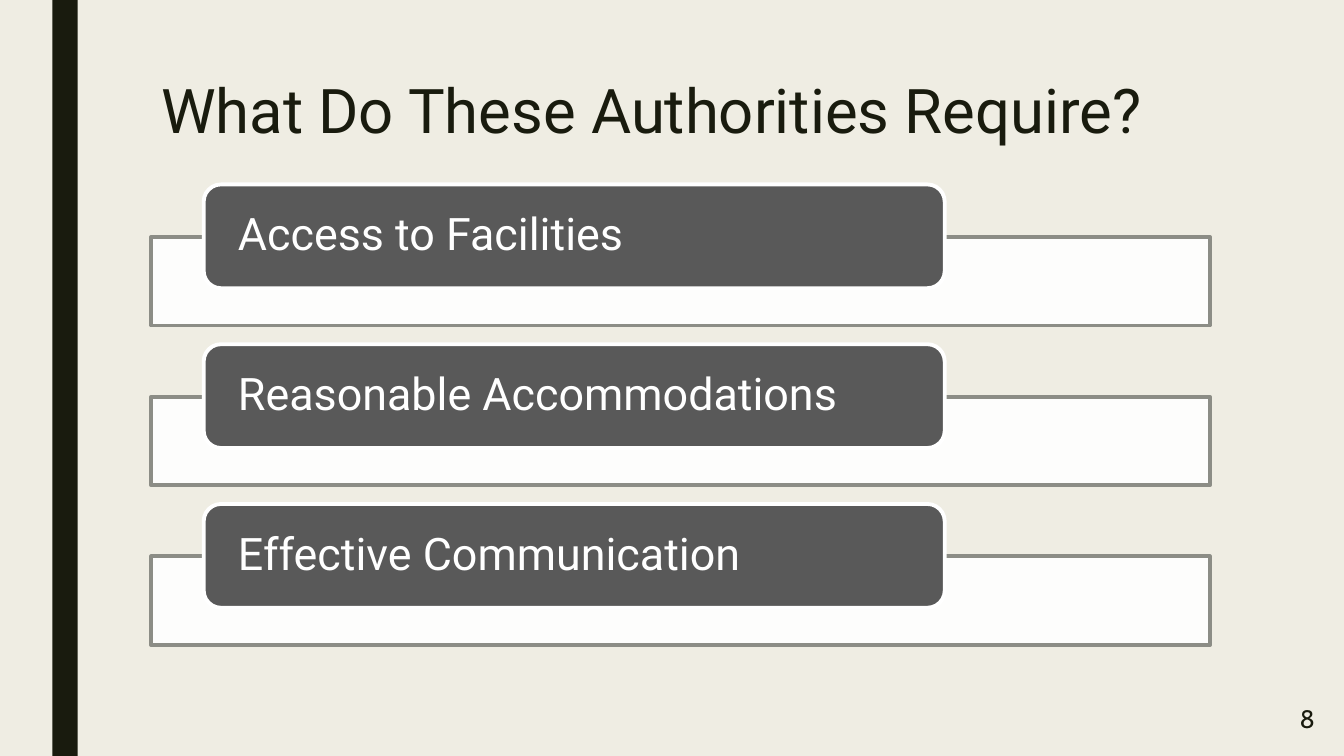
from lxml import etree
from pptx import Presentation
from pptx.dml.color import RGBColor
from pptx.enum import shapes, text
from pptx.oxml.ns import qn
from pptx.util import Inches, Pt

TITLE = "What Do These Authorities Require?"
REQUIREMENTS = [
    "Access to Facilities",
    "Reasonable Accommodations",
    "Effective Communication",
]
PAGE_NUMBER = "8"

INK, PAPER, WHITE = "191B0E", "EFEDE3", "FFFFFF"
LABEL_GREY, BORDER_GREY = "595959", "8C8D86"
LEFT, WIDTH = 1.5, 10.5
FIRST_PANEL_TOP, PITCH = 2.35, 1.585
LABEL_INDENT, LABEL_RISE = 0.52, 0.52


def paint(target, color):
    target.solid()
    target.fore_color.rgb = RGBColor.from_string(color)


def add_block(slide, kind, left, top, width, height, fill, border=None):
    block = slide.shapes.add_shape(
        kind, Inches(left), Inches(top), Inches(width), Inches(height))
    block.shadow.inherit = False
    paint(block.fill, fill)
    if border:
        paint(block.line.fill, border)
        block.line.width = Pt(2.75)
    else:
        block.line.fill.background()
    return block


def write(block, words, size, font, color, align=text.PP_ALIGN.LEFT,
          anchor=text.MSO_ANCHOR.MIDDLE, spacing=1.0):
    frame = block.text_frame
    frame.word_wrap = True
    frame.vertical_anchor = anchor
    line = frame.paragraphs[0]
    line.text = words
    line.alignment = align
    line.line_spacing = spacing
    line.font.size = Pt(size)
    line.font.name = font
    line.font.color.rgb = RGBColor.from_string(color)
    return frame


def add_requirement(slide, words, top):
    panel = add_block(slide, shapes.MSO_SHAPE.RECTANGLE,
                      LEFT, top, WIDTH, 0.88, WHITE, BORDER_GREY)
    tint = panel.fill._xPr.find(qn("a:solidFill"))[0]
    etree.SubElement(tint, qn("a:alpha"), val="90000")
    label = add_block(slide, shapes.MSO_SHAPE.ROUNDED_RECTANGLE,
                      LEFT + LABEL_INDENT, top - LABEL_RISE, 7.35, 1.03,
                      LABEL_GREY, WHITE)
    frame = write(label, words, 32, "Roboto", WHITE, spacing=0.9)
    frame.margin_left = frame.margin_right = Inches(0.29)
    frame.margin_top = frame.margin_bottom = 0


def main():
    deck = Presentation()
    deck.slide_width, deck.slide_height = Inches(13.33), Inches(7.5)
    slide = deck.slides.add_slide(deck.slide_layouts[6])
    paint(slide.background.fill, PAPER)
    add_block(slide, shapes.MSO_SHAPE.RECTANGLE, 0.52, 0, 0.25, 7.5, INK)

    title = slide.shapes.add_textbox(
        Inches(LEFT), Inches(0.75), Inches(WIDTH), Inches(1.62))
    write(title, TITLE, 44, "Roboto", INK,
          anchor=text.MSO_ANCHOR.TOP, spacing=0.89)

    for row, words in enumerate(REQUIREMENTS):
        add_requirement(slide, words, FIRST_PANEL_TOP + row * PITCH)

    number = slide.shapes.add_textbox(
        Inches(11.39), Inches(6.91), Inches(1.75), Inches(0.44))
    write(number, PAGE_NUMBER, 18, "Cabin", INK, align=text.PP_ALIGN.RIGHT)
    deck.save("out.pptx")


if __name__ == "__main__":
    main()
